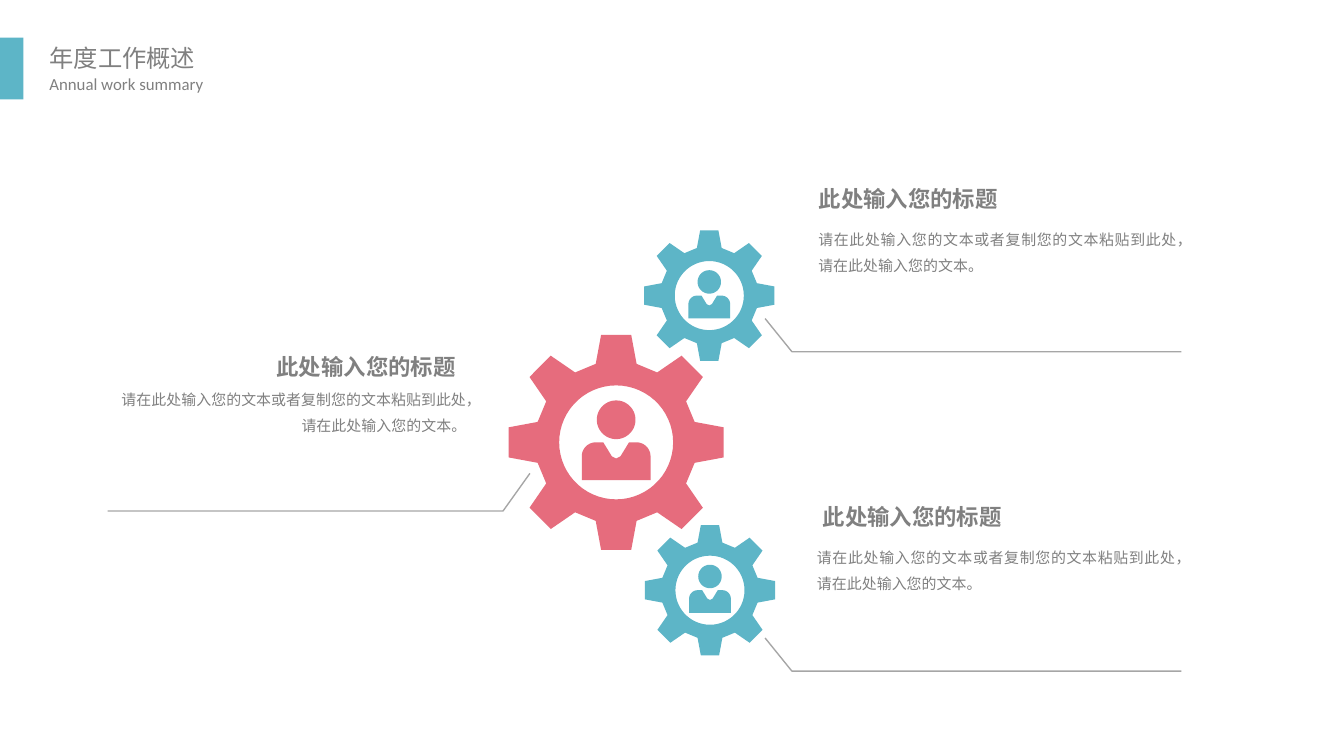
from math import cos, pi, sin

from lxml import etree
from pptx import Presentation
from pptx import util as u
from pptx.dml.color import RGBColor
from pptx.enum import shapes, text
from pptx.oxml import ns

COLUMNS = 100
WIDTH = u.Inches(10)
HEIGHT = u.Emu(WIDTH * 9 // 16)
TEAL, ROSE, GREY, RULE = "5DB5C7", "E66C7D", "808080", "A6A6A6"
CJK, LATIN = "Noto Sans CJK SC", "Calibri"
HEADING = "此处输入您的标题"
DETAIL = "请在此处输入您的文本或者复制您的文本粘贴到此处，请在此处输入您的文本。"
TOOTH = [(0.73, -0.19), (1, -0.14), (1, 0.14), (0.73, 0.19)]


def grid(units):
    return u.Emu(round(WIDTH * units / COLUMNS))


def color(value):
    return RGBColor.from_string(value)


def write(frame, words, size=12, font=CJK, bold=False, align=text.PP_ALIGN.LEFT,
          leading=None, wrap=False, inset=(0.1, 0.05)):
    frame.word_wrap = wrap
    frame.auto_size = text.MSO_AUTO_SIZE.SHAPE_TO_FIT_TEXT
    frame.vertical_anchor = text.MSO_ANCHOR.TOP
    frame.margin_left = frame.margin_right = u.Inches(inset[0])
    frame.margin_top = frame.margin_bottom = u.Inches(inset[1])
    paragraph = frame.paragraphs[0]
    paragraph.alignment = align
    if leading:
        paragraph.line_spacing = u.Pt(leading)
    run = paragraph.add_run()
    run.text = words
    run.font.size, run.font.bold, run.font.name = u.Pt(size), bold, font
    run.font.color.rgb = color(GREY)
    east_asian = etree.SubElement(run.font._element, ns.qn("a:ea"))
    east_asian.set("typeface", font)


def add_words(slide, place, words, **style):
    box = slide.shapes.add_textbox(*map(grid, place))
    write(box.text_frame, words, **style)


def draw(slide, contours, fill=None, line=None):
    outlines = [[(grid(x), grid(y)) for x, y in points] for points in contours]
    builder = slide.shapes.build_freeform(*outlines[0][0])
    for index, points in enumerate(outlines):
        if index:
            builder.move_to(*points[0])
        builder.add_line_segments(points[1:], close=fill is not None)
    outline = builder.convert_to_shape()
    outline.shadow.inherit = False
    if fill:
        outline.fill.solid()
        outline.fill.fore_color.rgb = color(fill)
        outline.line.fill.background()
    else:
        outline.fill.background()
        outline.line.color.rgb = color(line)
        outline.line.width = u.Pt(0.75)


def arc(x, y, radius, start=0, end=360, steps=60):
    angles = [(start + (end - start) * i / steps) * pi / 180 for i in range(steps + 1)]
    return [(x + radius * cos(a), y + radius * sin(a)) for a in angles]


def gear_rim():
    return [(x * cos(turn) - y * sin(turn), x * sin(turn) + y * cos(turn))
            for turn in (i * pi / 4 for i in range(8)) for x, y in TOOTH]


def person_body():
    collar = [(0.12, 0), (0.04, 0.13), (0, 0.15), (-0.04, 0.13), (-0.12, 0)]
    left = arc(-0.19, 0.13, 0.13, 270, 180, 12)
    right = arc(0.19, 0.13, 0.13, 360, 270, 12)
    return collar + left + [(-0.32, 0.35), (0.32, 0.35)] + right


def add_gear(slide, x, y, radius, fill):
    def placed(*contours):
        return [[(x + radius * px, y + radius * py) for px, py in points]
                for points in contours]

    draw(slide, placed(gear_rim(), arc(0, 0, 0.53)), fill=fill)
    draw(slide, placed(arc(0, -0.21, 0.18), person_body()), fill=fill)


def add_header(slide):
    title = slide.shapes.title
    title.left, title.top, title.width, title.height = map(grid, (2.9, 2.8, 12.5, 2.9))
    write(title.text_frame, "年度工作概述", size=13, inset=(0.08, 0.04))
    add_words(slide, (2.87, 5.1, 13.1, 2.3), "Annual work summary",
              size=9, font=LATIN, inset=(0.08, 0.04))
    marker = slide.shapes.add_shape(shapes.MSO_SHAPE.RECTANGLE,
                                    *map(grid, (0, 2.8, 1.75, 4.6)))
    marker.shadow.inherit = False
    marker.fill.solid()
    marker.fill.fore_color.rgb = color(TEAL)
    marker.line.fill.background()


def add_topic(slide, heading_at, detail_at, align, leader):
    add_words(slide, (*detail_at, 28.7, 4.9), DETAIL, size=8, align=align,
              leading=14, wrap=True)
    add_words(slide, (*heading_at, 15.5, 3), HEADING, bold=True)
    draw(slide, [leader], line=RULE)


def main():
    deck = Presentation()
    deck.slide_width, deck.slide_height = WIDTH, HEIGHT
    slide = deck.slides.add_slide(deck.slide_layouts[5])
    add_header(slide)

    for gear in [(52.83, 43.92, 4.85, TEAL), (52.78, 22, 4.85, TEAL),
                 (45.85, 32.92, 8, ROSE)]:
        add_gear(slide, *gear)

    add_topic(slide, (19.6, 25.8), (7, 27.93), text.PP_ALIGN.RIGHT,
              [(39.43, 35.22), (37.43, 38.02), (8, 38.02)])
    for heading_at, detail_at, top in [((59.93, 13.3), (59.9, 16.07), 23.7),
                                       ((60.23, 36.95), (59.8, 39.73), 47.47)]:
        add_topic(slide, heading_at, detail_at, text.PP_ALIGN.JUSTIFY,
                  [(56.93, top), (58.93, top + 2.47), (87.9, top + 2.47)])

    deck.save("out.pptx")


if __name__ == "__main__":
    main()
